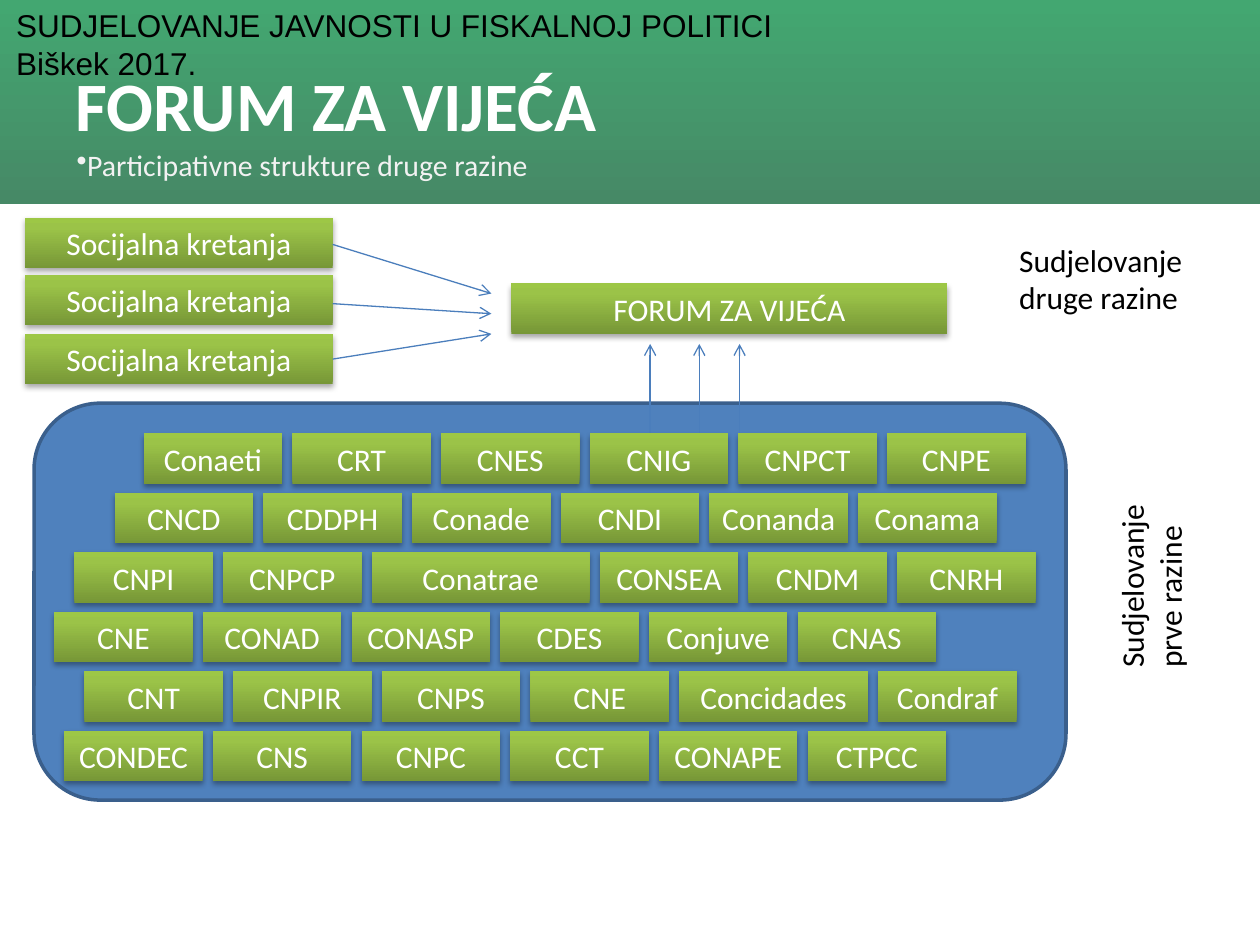
import pptx
import pptx.util
import pptx.dml.color
import pptx.enum.shapes
import pptx.enum.text
import pptx.oxml
import pptx.oxml.ns

Inches = pptx.util.Inches
Pt = pptx.util.Pt
RGBColor = pptx.dml.color.RGBColor
SHAPE = pptx.enum.shapes.MSO_SHAPE
ALIGN = pptx.enum.text.PP_ALIGN
ANCHOR = pptx.enum.text.MSO_ANCHOR

WHITE = RGBColor(0xFF, 0xFF, 0xFF)
BLACK = RGBColor(0x00, 0x00, 0x00)
PALE = RGBColor(0xF2, 0xF2, 0xF2)
PANEL = RGBColor(0x4F, 0x81, 0xBD)
PANEL_EDGE = RGBColor(0x3A, 0x5F, 0x8C)
ARROW = RGBColor(0x4B, 0x7E, 0xBC)
HEADER_STOPS = [(0, RGBColor(0x43, 0xA7, 0x71)), (100, RGBColor(0x46, 0x89, 0x66))]
TILE_STOPS = [(0, RGBColor(0x77, 0x97, 0x37)), (80, RGBColor(0x9B, 0xC3, 0x48)),
              (100, RGBColor(0x9D, 0xC7, 0x46))]

TILE_W, TILE_H, TILE_GAP, ROW_PITCH = 1.1, 0.4, 0.08, 0.472
COUNCIL_ROWS = [
    (0.87, ["Conaeti", "CRT", "CNES", "CNIG", "CNPCT", "CNPE"]),
    (0.64, ["CNCD", "CDDPH", "Conade", "CNDI", "Conanda", "Conama"]),
    (0.32, ["CNPI", "CNPCP", "Conatrae", "CONSEA", "CNDM", "CNRH"]),
    (0.16, ["CNE", "CONAD", "CONASP", "CDES", "Conjuve", "CNAS"]),
    (0.40, ["CNT", "CNPIR", "CNPS", "CNE", "Concidades", "Condraf"]),
    (0.24, ["CONDEC", "CNS", "CNPC", "CCT", "CONAPE", "CTPCC"]),
]
WIDE_TILES = {"Conatrae": 1.73, "Concidades": 1.5}


def xml(tag, attrs="", inner=""):
    ns = pptx.oxml.ns.nsdecls("a")
    return pptx.oxml.parse_xml(f"<a:{tag} {ns} {attrs}>{inner}</a:{tag}>")


def write(sp, text, size=18, color=BLACK, font="Calibri", bold=False, align=ALIGN.LEFT,
          anchor=ANCHOR.TOP, wrap=True, bullet=None, vert=None):
    tf = sp.text_frame
    tf.word_wrap = wrap
    tf.vertical_anchor = anchor
    if vert:
        tf._txBody.bodyPr.set("vert", vert)
    for i, line in enumerate(text.split("\n")):
        p = tf.paragraphs[0] if i == 0 else tf.add_paragraph()
        p.alignment = align
        if bullet:
            p._p.get_or_add_pPr().append(xml("buChar", f'char="{bullet}"'))
        r = p.add_run()
        r.text = line
        r.font.name = font
        r.font.size = Pt(size)
        r.font.bold = bold
        r.font.color.rgb = color


def add_text(s, x, y, w, h, text, **fmt):
    sp = s.shapes.add_textbox(Inches(x), Inches(y), Inches(w), Inches(h))
    write(sp, text, **fmt)


def add_box(s, x, y, w, h, kind=SHAPE.RECTANGLE):
    sp = s.shapes.add_shape(kind, Inches(x), Inches(y), Inches(w), Inches(h))
    sp.shadow.inherit = False
    sp.line.fill.background()
    return sp


def fill_gradient(sp, stops, angle):
    sp.fill.background()
    none = sp._element.spPr.find(pptx.oxml.ns.qn("a:noFill"))
    items = "".join(f'<a:gs pos="{pos * 1000}"><a:srgbClr val="{color}"/></a:gs>'
                    for pos, color in stops)
    none.getparent().replace(none, xml(
        "gradFill", 'rotWithShape="1"',
        f'<a:gsLst>{items}</a:gsLst><a:lin ang="{angle * 60000}" scaled="0"/>'))


def add_tile(s, x, y, w, text):
    sp = add_box(s, x, y, w, TILE_H)
    fill_gradient(sp, TILE_STOPS, 270)
    effects = sp._element.spPr.find(pptx.oxml.ns.qn("a:effectLst"))
    effects.append(xml(
        "outerShdw", 'blurRad="40000" dist="23000" dir="5400000" rotWithShape="0"',
        '<a:srgbClr val="000000"><a:alpha val="35000"/></a:srgbClr>'))
    write(sp, text, color=WHITE, align=ALIGN.CENTER, anchor=ANCHOR.MIDDLE, wrap=False)


def add_arrow(s, x1, y1, x2, y2):
    line = s.shapes.add_connector(pptx.enum.shapes.MSO_CONNECTOR.STRAIGHT,
                                  Inches(x1), Inches(y1), Inches(x2), Inches(y2))
    line.line.color.rgb = ARROW
    line.line.width = Pt(0.75)
    line.line._get_or_add_ln().append(xml("tailEnd", 'type="arrow"'))
    line._element.spPr.append(xml("effectLst"))


def add_header(s, x, y, w, h):
    fill_gradient(add_box(s, x, y, w, h), HEADER_STOPS, 90)
    add_text(s, x + 0.03, y, w - 0.22, 0.7,
             "SUDJELOVANJE JAVNOSTI U FISKALNOJ POLITICI\nBiškek 2017.", font="Arial")
    add_text(s, x + 0.5, y + 0.44, w - 1, 0.77, "FORUM ZA VIJEĆA",
             size=39.6, color=WHITE, bold=True, anchor=ANCHOR.MIDDLE)
    add_text(s, x + 0.51, y + 1.07, w - 1.02, 0.47, "Participativne strukture druge razine",
             size=17, color=PALE, anchor=ANCHOR.MIDDLE, bullet="•")


def add_second_level(s, x, y, w):
    for dy in (0, 0.45, 0.92):
        add_tile(s, x, y + dy, 2.44, "Socijalna kretanja")
    add_tile(s, x + 3.86, y + 0.52, 3.46, "FORUM ZA VIJEĆA")
    for start, end in ((0.21, 0.6), (0.68, 0.76), (1.12, 0.92)):
        add_arrow(s, x + 2.44, y + start, x + 3.7, y + end)
    add_text(s, x + w - 1.5, y + 0.13, 1.5, 0.71, "Sudjelovanje\ndruge razine", wrap=False)


def add_first_level(s, x, y, w, h):
    panel = add_box(s, x, y, w, h, SHAPE.ROUNDED_RECTANGLE)
    panel.fill.solid()
    panel.fill.fore_color.rgb = PANEL
    panel.line.color.rgb = PANEL_EDGE
    panel.line.width = Pt(2)
    for dx in (4.89, 5.28, 5.6):
        add_arrow(s, x + dx, y + 0.39, x + dx, y - 0.47)
    for row, (indent, names) in enumerate(COUNCIL_ROWS):
        left = x + indent
        for name in names:
            width = WIDE_TILES.get(name, TILE_W)
            add_tile(s, left, y + 0.24 + row * ROW_PITCH, width, name)
            left += width + TILE_GAP
    add_text(s, x + w + 0.32, y + 0.8, 0.81, 1.4, "Sudjelovanje\nprve razine",
             wrap=False, vert="vert270")


def main():
    prs = pptx.Presentation()
    prs.slide_width = Inches(10)
    prs.slide_height = Inches(7.5)
    s = prs.slides.add_slide(prs.slide_layouts[6])
    add_header(s, 0, 0, 10, 1.62)
    add_first_level(s, 0.27, 3.2, 8.19, 3.15)
    add_second_level(s, 0.2, 1.73, 9.29)
    prs.save("out.pptx")


if __name__ == "__main__":
    main()
